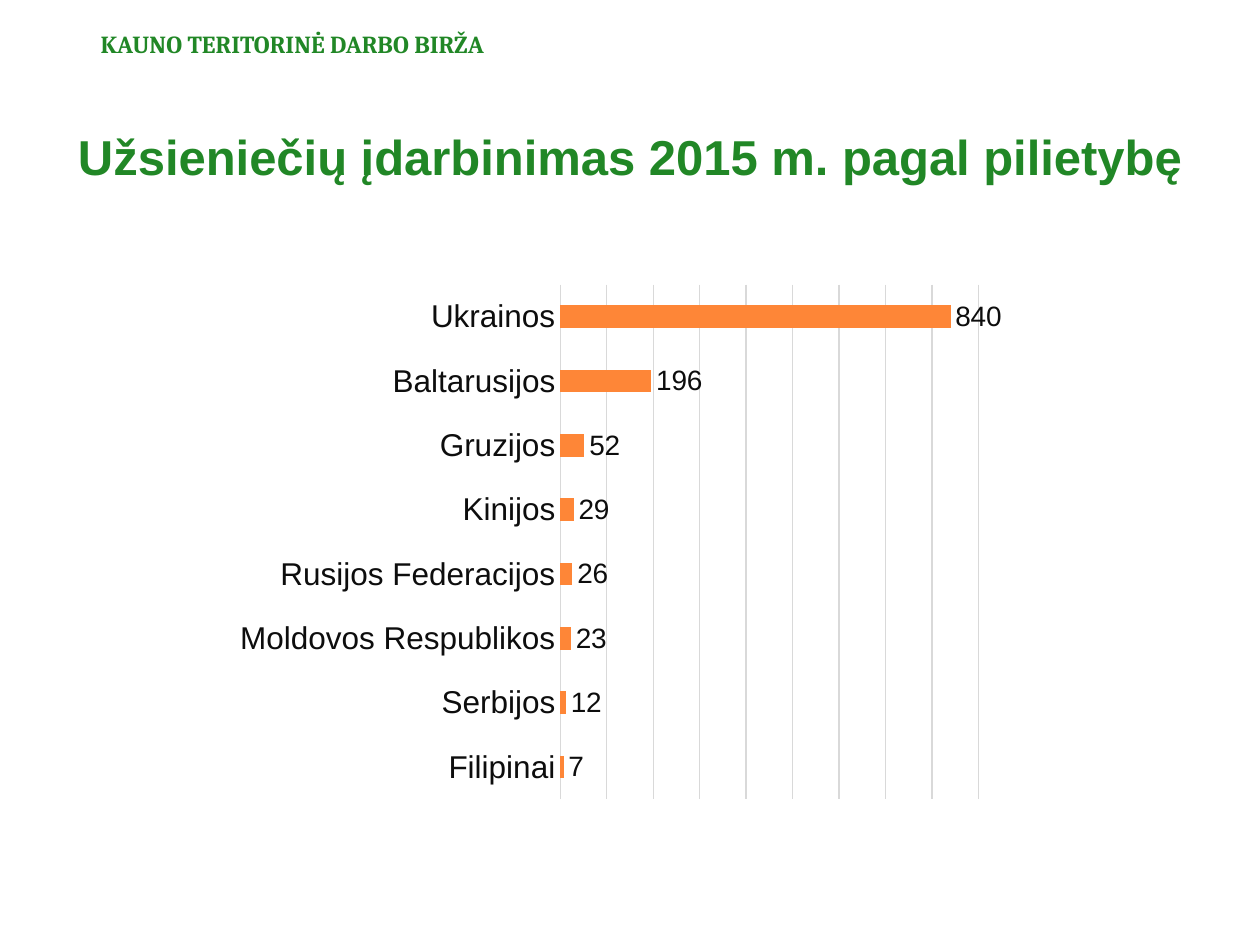
from dataclasses import dataclass

from lxml.etree import SubElement
from pptx import Presentation
from pptx.chart.data import CategoryChartData
from pptx.dml.color import RGBColor
from pptx.enum.chart import XL_CHART_TYPE, XL_LABEL_POSITION, XL_TICK_LABEL_POSITION, XL_TICK_MARK
from pptx.enum.text import MSO_ANCHOR, PP_ALIGN
from pptx.oxml.ns import qn
from pptx.util import Pt


@dataclass(frozen=True)
class Theme:
    green: str = "218726"
    orange: str = "FE8637"
    ink: str = "0D0D0D"
    grid: str = "D9D9D9"
    sans: str = "Arial"
    serif: str = "Cambria"
    title_size: int = 28
    category_size: int = 18
    value_size: int = 16
    header_size: int = 14


@dataclass(frozen=True)
class Box:
    left: float
    top: float
    width: float
    height: float

    def points(self) -> tuple:
        return Pt(self.left), Pt(self.top), Pt(self.width), Pt(self.height)


@dataclass(frozen=True)
class Citizenship:
    name: str
    workers: int


THEME = Theme()
CITIZENSHIPS = [
    Citizenship("Filipinai", 7),
    Citizenship("Serbijos", 12),
    Citizenship("Moldovos Respublikos", 23),
    Citizenship("Rusijos Federacijos", 26),
    Citizenship("Kinijos", 29),
    Citizenship("Gruzijos", 52),
    Citizenship("Baltarusijos", 196),
    Citizenship("Ukrainos", 840),
]


def style_font(font, name: str, size: int, color: str, bold: bool = False) -> None:
    font.name = name
    font.size = Pt(size)
    font.bold = bold
    font.color.rgb = RGBColor.from_string(color)


def style_line(line, color: str) -> None:
    line.width = Pt(0.75)
    line.color.rgb = RGBColor.from_string(color)


def add_title(s, text: str, box: Box) -> None:
    sp = s.shapes.title
    sp.left, sp.top, sp.width, sp.height = box.points()
    tf = sp.text_frame
    tf.text = text
    tf.vertical_anchor = MSO_ANCHOR.MIDDLE
    p = tf.paragraphs[0]
    p.alignment = PP_ALIGN.CENTER
    style_font(p.runs[0].font, THEME.sans, THEME.title_size, THEME.green, True)


def add_header(s, text: str, box: Box) -> None:
    tf = s.shapes.add_textbox(*box.points()).text_frame
    tf.word_wrap = True
    tf.text = text
    r = tf.paragraphs[0].runs[0]
    style_font(r.font, THEME.serif, THEME.header_size, THEME.green, True)


def place_plot(chart, area: dict[str, float]) -> None:
    plot_area = chart.element.find(".//" + qn("c:plotArea"))
    for old in plot_area.findall(qn("c:layout")):
        plot_area.remove(old)
    layout = SubElement(plot_area, qn("c:layout"))
    plot_area.insert(0, layout)
    manual = SubElement(layout, qn("c:manualLayout"))
    settings = {"layoutTarget": "inner", "xMode": "edge", "yMode": "edge"} | area
    for tag, value in settings.items():
        SubElement(manual, qn(f"c:{tag}")).set("val", str(value))


def add_bar_chart(s, rows: list[Citizenship], box: Box) -> None:
    data = CategoryChartData()
    data.categories = [row.name for row in rows]
    data.add_series("Series 1", [row.workers for row in rows])
    chart = s.shapes.add_chart(XL_CHART_TYPE.BAR_CLUSTERED, *box.points(), data).chart
    chart.has_title = False
    chart.has_legend = False
    style_font(chart.font, THEME.sans, THEME.value_size, THEME.ink)
    place_plot(chart, {"x": 0.417, "y": 0.054, "w": 0.502, "h": 0.92})

    cat = chart.category_axis
    cat.major_tick_mark = XL_TICK_MARK.NONE
    cat.tick_label_position = XL_TICK_LABEL_POSITION.NEXT_TO_AXIS
    style_font(cat.tick_labels.font, THEME.sans, THEME.category_size, THEME.ink)
    style_line(cat.format.line, THEME.grid)

    val = chart.value_axis
    val.visible = False
    val.minimum_scale, val.maximum_scale, val.major_unit = 0, 900, 100
    val.has_major_gridlines = True
    style_line(val.major_gridlines.format.line, THEME.grid)

    plot = chart.plots[0]
    plot.gap_width = 182
    plot.vary_by_categories = False
    series = plot.series[0]
    series.format.fill.solid()
    series.format.fill.fore_color.rgb = RGBColor.from_string(THEME.orange)
    labels = series.data_labels
    labels.show_value = True
    labels.position = XL_LABEL_POSITION.OUTSIDE_END
    style_font(labels.font, THEME.sans, THEME.value_size, THEME.ink)


def main() -> None:
    prs = Presentation()
    prs.slide_width, prs.slide_height = Pt(720), Pt(540)
    s = prs.slides.add_slide(prs.slide_layouts[5])
    add_title(s, "Užsieniečių įdarbinimas 2015 m. pagal pilietybę", Box(20, 60.5, 680, 57))
    add_bar_chart(s, CITIZENSHIPS, Box(121.7, 145.4, 476, 319.7))
    add_header(s, "KAUNO TERITORINĖ DARBO BIRŽA", Box(50.4, 13, 380, 24.5))
    prs.save("out.pptx")


if __name__ == "__main__":
    main()
